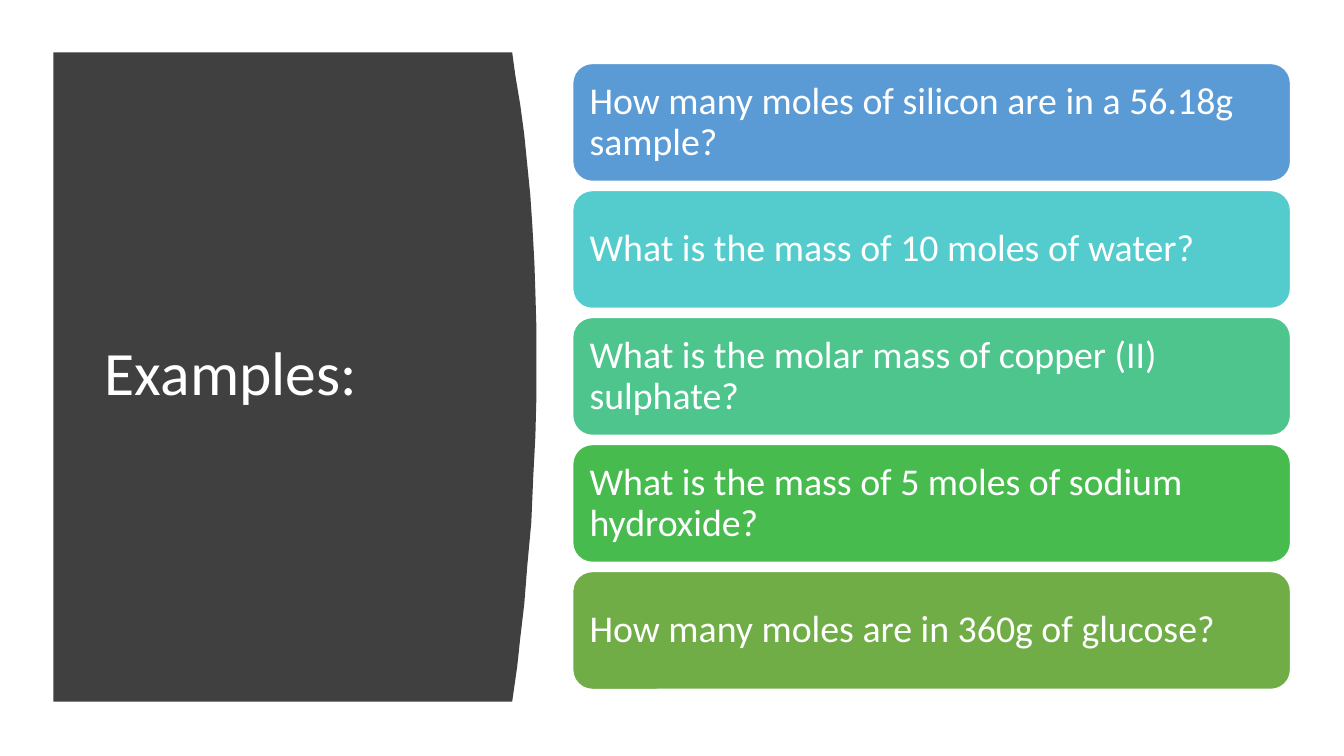
"""Build the mole calculation examples slide."""
from pptx import Presentation
from pptx.dml.color import RGBColor
from pptx.enum.shapes import MSO_SHAPE
from pptx.enum.text import MSO_ANCHOR, MSO_AUTO_SIZE, PP_ALIGN
from pptx.util import Pt

PX = 9144
FONT = "Calibri"
WHITE = "FFFFFF"
DARK = "404040"
TITLE = "Examples:"
CARDS = [
    ("How many moles of silicon are in a 56.18g sample?", "5B9BD5"),
    ("What is the mass of 10 moles of water?", "54CCCD"),
    ("What is the molar mass of copper (II) sulphate?", "4DC58D"),
    ("What is the mass of 5 moles of sodium hydroxide?", "48BB4F"),
    ("How many moles are in 360g of glucose?", "70AD47"),
]
EDGE = [
    (508, 52), (511, 74), (516, 104), (520, 134), (523, 164), (526, 194),
    (528, 224), (530, 260), (531, 290), (532, 325), (532, 394), (531, 433),
    (529, 471), (527, 518), (523, 561), (520, 599), (516, 633), (513, 661),
    (510, 682), (508, 696),
]
LEFT, TOP, BOTTOM = 53, 52, 696
CARD_X, CARD_Y, CARD_W, CARD_H, STEP = 568, 63, 712, 117, 126


def color(code):
    return RGBColor.from_string(code)


def paint(shape, code):
    shape.fill.solid()
    shape.fill.fore_color.rgb = color(code)
    shape.shadow.inherit = False


def write(shape, text, size, inset):
    frame = shape.text_frame
    frame.text = text
    frame.word_wrap = True
    frame.auto_size = MSO_AUTO_SIZE.NONE
    frame.vertical_anchor = MSO_ANCHOR.MIDDLE
    frame.margin_left = frame.margin_right = inset * PX
    line = frame.paragraphs[0]
    line.alignment = PP_ALIGN.LEFT
    line.line_spacing = 0.9
    font = line.runs[0].font
    font.name = FONT
    font.size = Pt(size)
    font.color.rgb = color(WHITE)


def add_panel(slide):
    outline = slide.shapes.build_freeform(LEFT, TOP, scale=float(PX))
    outline.add_line_segments(EDGE + [(LEFT, BOTTOM)], close=True)
    panel = outline.convert_to_shape()
    paint(panel, DARK)
    panel.line.fill.background()
    return panel


def add_title(slide, panel):
    title = slide.shapes.title
    title.left, title.top = 94 * PX, 111 * PX
    title.width, title.height = 374 * PX, 524 * PX
    write(title, TITLE, 44, 10)
    title._element.addprevious(panel._element)


def add_card(slide, row, text, fill):
    card = slide.shapes.add_shape(
        MSO_SHAPE.ROUNDED_RECTANGLE,
        CARD_X * PX, (CARD_Y + row * STEP) * PX, CARD_W * PX, CARD_H * PX)
    paint(card, fill)
    card.line.color.rgb = color(WHITE)
    card.line.width = Pt(1)
    write(card, text, 27, 11)


def main():
    deck = Presentation()
    deck.slide_width, deck.slide_height = 1333 * PX, 750 * PX
    slide = deck.slides.add_slide(deck.slide_layouts[5])
    add_title(slide, add_panel(slide))
    for row, (text, fill) in enumerate(CARDS):
        add_card(slide, row, text, fill)
    deck.save("out.pptx")


if __name__ == "__main__":
    main()
